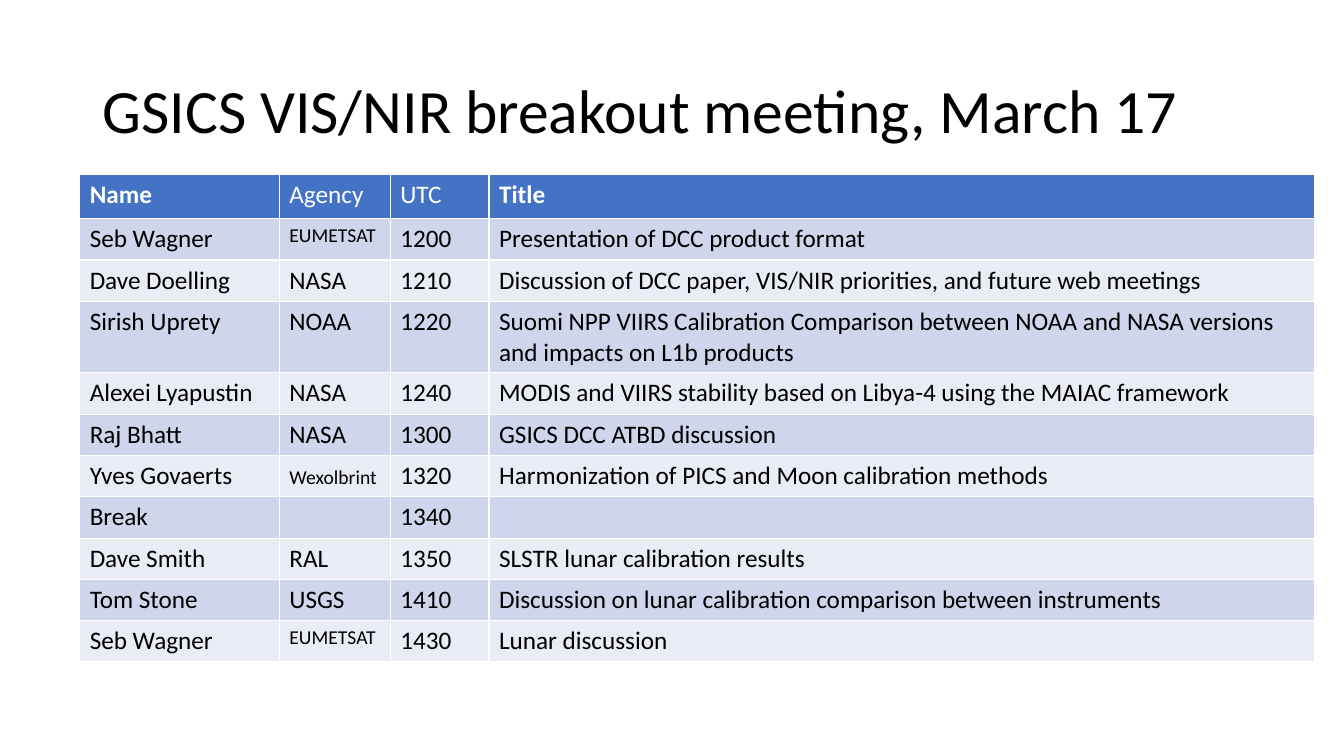
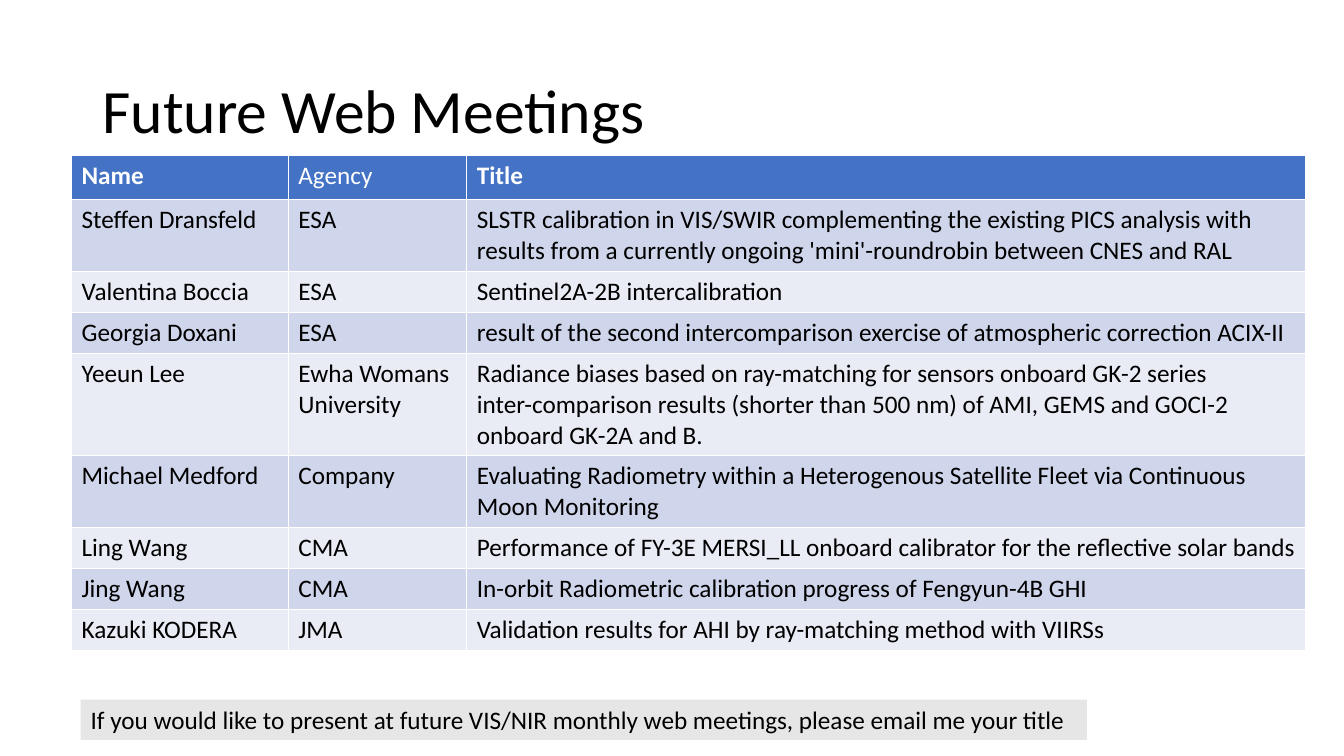
from dataclasses import dataclass

from pptx import Presentation
from pptx.dml.color import RGBColor
from pptx.enum.shapes import MSO_SHAPE
from pptx.enum.text import MSO_ANCHOR, PP_ALIGN
from pptx.slide import Slide
from pptx.text.text import TextFrame
from pptx.util import Inches, Length, Pt


@dataclass(frozen=True)
class Theme:
    font: str = "Calibri"
    ink: RGBColor = RGBColor(0x00, 0x00, 0x00)
    header_ink: RGBColor = RGBColor(0xFF, 0xFF, 0xFF)
    header_fill: RGBColor = RGBColor(0x44, 0x72, 0xC4)
    bands: tuple[RGBColor, RGBColor] = (RGBColor(0xCF, 0xD5, 0xEA), RGBColor(0xE9, 0xEB, 0xF5))
    note_fill: RGBColor = RGBColor(0xE7, 0xE6, 0xE6)
    title_size: Length = Pt(44)
    body_size: Length = Pt(18)
    small_size: Length = Pt(14)


THEME = Theme()
HEADER_HEIGHT, ROW_HEIGHT, EXTRA_LINE = 0.44, 0.41, 0.3


@dataclass(frozen=True)
class Column:
    heading: str
    field: str
    width: float
    bold: bool = False


@dataclass(frozen=True)
class Talk:
    name: str
    agency: str
    title: str
    utc: str = ""
    lines: int = 1
    small_agency: bool = False
    agency_top: float = 0.05


@dataclass(frozen=True)
class Agenda:
    heading: str
    left: float
    top: float
    columns: tuple[Column, ...]
    talks: tuple[Talk, ...]
    note: str = ""


BREAKOUT = Agenda(
    "GSICS VIS/NIR breakout meeting, March 17", 0.79, 1.73,
    (
        Column("Name", "name", 1.98, bold=True),
        Column("Agency", "agency", 1.1),
        Column("UTC", "utc", 0.98),
        Column("Title", "title", 8.19, bold=True),
    ),
    (
        Talk("Seb Wagner", "EUMETSAT", "Presentation of DCC product format", "1200", small_agency=True),
        Talk("Dave Doelling", "NASA",
             "Discussion of DCC paper, VIS/NIR priorities, and future web meetings", "1210"),
        Talk("Sirish Uprety", "NOAA",
             "Suomi NPP VIIRS Calibration Comparison between NOAA and NASA versions "
             "and impacts on L1b products", "1220", lines=2),
        Talk("Alexei Lyapustin", "NASA",
             "MODIS and VIIRS stability based on Libya-4 using the MAIAC framework", "1240"),
        Talk("Raj Bhatt", "NASA", "GSICS DCC ATBD discussion", "1300"),
        Talk("Yves Govaerts", "Wexolbrint", "Harmonization of PICS and Moon calibration methods",
             "1320", small_agency=True, agency_top=0.1),
        Talk("Break", "", "", "1340"),
        Talk("Dave Smith", "RAL", "SLSTR lunar calibration results", "1350"),
        Talk("Tom Stone", "USGS",
             "Discussion on lunar calibration comparison between instruments", "1410"),
        Talk("Seb Wagner", "EUMETSAT", "Lunar discussion", "1430", small_agency=True),
    ),
)

FUTURE = Agenda(
    "Future Web Meetings", 0.71, 1.54,
    (
        Column("Name", "name", 2.15, bold=True),
        Column("Agency", "agency", 1.77),
        Column("Title", "title", 8.32, bold=True),
    ),
    (
        Talk("Steffen Dransfeld", "ESA",
             "SLSTR calibration in VIS/SWIR complementing the existing PICS analysis with "
             "results from a currently ongoing 'mini'-roundrobin between CNES and RAL", lines=2),
        Talk("Valentina Boccia", "ESA", "Sentinel2A-2B intercalibration"),
        Talk("Georgia Doxani", "ESA",
             "result of the second intercomparison exercise of atmospheric correction ACIX-II"),
        Talk("Yeeun Lee", "Ewha Womans University",
             "Radiance biases based on ray-matching for sensors onboard GK-2 series\n"
             "inter-comparison results (shorter than 500 nm) of AMI, GEMS and GOCI-2 "
             "onboard GK-2A and B.", lines=3),
        Talk("Michael Medford", "Company",
             "Evaluating Radiometry within a Heterogenous Satellite Fleet via Continuous "
             "Moon Monitoring", lines=2),
        Talk("Ling Wang", "CMA",
             "Performance of FY-3E MERSI_LL onboard calibrator for the reflective solar bands"),
        Talk("Jing Wang", "CMA", "In-orbit Radiometric calibration progress of Fengyun-4B GHI"),
        Talk("Kazuki KODERA", "JMA", "Validation results for AHI by ray-matching method with VIIRSs"),
    ),
    "If you would like to present at future VIS/NIR monthly web meetings, please email me your title",
)


def write(frame: TextFrame, text: str, size: Length = THEME.body_size,
          color: RGBColor = THEME.ink, bold: bool = False) -> None:
    frame.text = text
    for paragraph in frame.paragraphs:
        paragraph.alignment = PP_ALIGN.LEFT
        font = paragraph.font
        font.name, font.size, font.bold = THEME.font, size, bold
        font.color.rgb = color


def add_heading(slide: Slide, text: str) -> None:
    frame = slide.shapes.add_textbox(Inches(0.92), Inches(0.4), Inches(11.5), Inches(1.45)).text_frame
    frame.word_wrap = True
    frame.vertical_anchor = MSO_ANCHOR.MIDDLE
    write(frame, text, THEME.title_size)
    frame.paragraphs[0].line_spacing = 0.9


def add_agenda_table(slide: Slide, agenda: Agenda) -> None:
    heights = [HEADER_HEIGHT] + [ROW_HEIGHT + EXTRA_LINE * (talk.lines - 1) for talk in agenda.talks]
    width = sum(column.width for column in agenda.columns)
    table = slide.shapes.add_table(
        len(heights), len(agenda.columns),
        Inches(agenda.left), Inches(agenda.top), Inches(width), Inches(sum(heights))).table
    for row, height in zip(table.rows, heights):
        row.height = Inches(height)

    for c, column in enumerate(agenda.columns):
        table.columns[c].width = Inches(column.width)
        header = table.cell(0, c)
        header.fill.solid()
        header.fill.fore_color.rgb = THEME.header_fill
        write(header.text_frame, column.heading, color=THEME.header_ink, bold=column.bold)
        for r, talk in enumerate(agenda.talks):
            cell = table.cell(r + 1, c)
            cell.fill.solid()
            cell.fill.fore_color.rgb = THEME.bands[r % 2]
            is_agency = column.field == "agency"
            small = is_agency and talk.small_agency
            write(cell.text_frame, getattr(talk, column.field),
                  THEME.small_size if small else THEME.body_size)
            if is_agency:
                cell.margin_top = Inches(talk.agency_top)


def add_note(slide: Slide, text: str) -> None:
    note = slide.shapes.add_shape(
        MSO_SHAPE.RECTANGLE, Inches(0.8), Inches(6.94), Inches(9.98), Inches(0.4))
    note.shadow.inherit = False
    note.fill.solid()
    note.fill.fore_color.rgb = THEME.note_fill
    note.line.fill.background()
    note.text_frame.word_wrap = True
    write(note.text_frame, text)


def main() -> None:
    deck = Presentation()
    deck.slide_width, deck.slide_height = Inches(13.33), Inches(7.5)
    for agenda in (BREAKOUT, FUTURE):
        slide = deck.slides.add_slide(deck.slide_layouts[6])
        add_heading(slide, agenda.heading)
        add_agenda_table(slide, agenda)
        if agenda.note:
            add_note(slide, agenda.note)
    deck.save("out.pptx")


if __name__ == "__main__":
    main()
